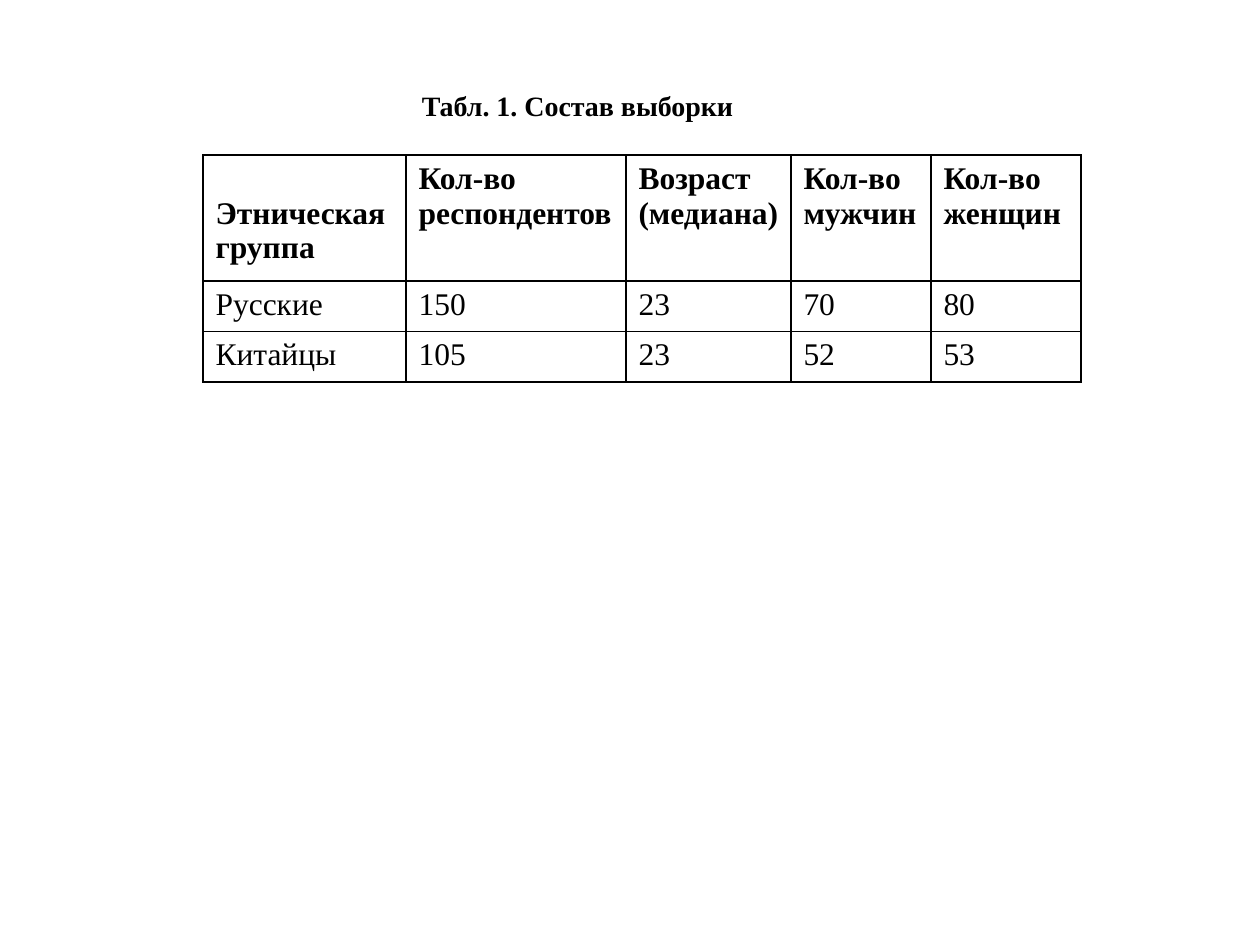
"""Build a slide with a captioned table describing the survey sample."""
from dataclasses import dataclass

from lxml import etree
from pptx import Presentation, util as u
from pptx.dml import color
from pptx.enum import text
from pptx.oxml import ns

EMU_PER_PX = 914400 // 126
COLORS = {"ink": "000000", "paper": "FFFFFF"}
FONT = "Times New Roman"
COLUMN_WIDTHS = (203, 220, 165, 140, 150)
LINE_HEIGHT = 35
CELL_MARGIN = 6


@dataclass(frozen=True)
class Row:
    height: int
    cells: tuple[str, ...]
    bold: bool = False


ROWS = (
    Row(126, ("Этническая\nгруппа", "Кол-во\nреспондентов", "Возраст\n(медиана)",
              "Кол-во\nмужчин", "Кол-во\nженщин"), bold=True),
    Row(50, ("Русские", "150", "23", "70", "80")),
    Row(50, ("Китайцы", "105", "23", "52", "53")),
)


def px(length: int) -> u.Emu:
    return u.Emu(length * EMU_PER_PX)


def write_text(frame, content: str, *, size: int, bold: bool, align) -> None:
    frame.text = content
    for paragraph in frame.paragraphs:
        paragraph.alignment = align
        font = paragraph.runs[0].font
        font.name, font.size, font.bold = FONT, u.Pt(size), bold
        font.color.rgb = color.RGBColor.from_string(COLORS["ink"])


def add_borders(cell) -> None:
    properties = cell._tc.get_or_add_tcPr()
    for index, side in enumerate(("lnL", "lnR", "lnT", "lnB")):
        line = etree.Element(ns.qn(f"a:{side}"), w=str(u.Pt(1)))
        fill = etree.SubElement(line, ns.qn("a:solidFill"))
        etree.SubElement(fill, ns.qn("a:srgbClr"), val=COLORS["ink"])
        properties.insert(index, line)


def add_caption(slide, content: str) -> None:
    box = slide.shapes.add_textbox(px(384), px(82), px(387), px(47))
    frame = box.text_frame
    frame.word_wrap = False
    frame.auto_size = text.MSO_AUTO_SIZE.SHAPE_TO_FIT_TEXT
    frame.vertical_anchor = text.MSO_ANCHOR.MIDDLE
    write_text(frame, content, size=16, bold=True, align=text.PP_ALIGN.CENTER)


def add_sample_table(slide, rows: tuple[Row, ...]) -> None:
    shape = slide.shapes.add_table(
        len(rows), len(COLUMN_WIDTHS), px(203), px(155),
        px(sum(COLUMN_WIDTHS)), px(sum(row.height for row in rows)))
    table = shape.table
    table.first_row = table.horz_banding = False
    for column, width in zip(table.columns, COLUMN_WIDTHS):
        column.width = px(width)
    for row_index, row in enumerate(rows):
        table.rows[row_index].height = px(row.height)
        for column_index, content in enumerate(row.cells):
            cell = table.cell(row_index, column_index)
            cell.fill.background()
            add_borders(cell)
            write_text(cell.text_frame, content, size=18, bold=row.bold,
                       align=text.PP_ALIGN.JUSTIFY)
    table.cell(0, 0).margin_top = px(CELL_MARGIN + LINE_HEIGHT)


def main() -> None:
    presentation = Presentation()
    presentation.slide_width, presentation.slide_height = px(1260), px(945)
    slide = presentation.slides.add_slide(presentation.slide_layouts[6])
    background = slide.background.fill
    background.solid()
    background.fore_color.rgb = color.RGBColor.from_string(COLORS["paper"])
    add_caption(slide, "Табл. 1. Состав выборки")
    add_sample_table(slide, ROWS)
    presentation.save("out.pptx")


if __name__ == "__main__":
    main()
